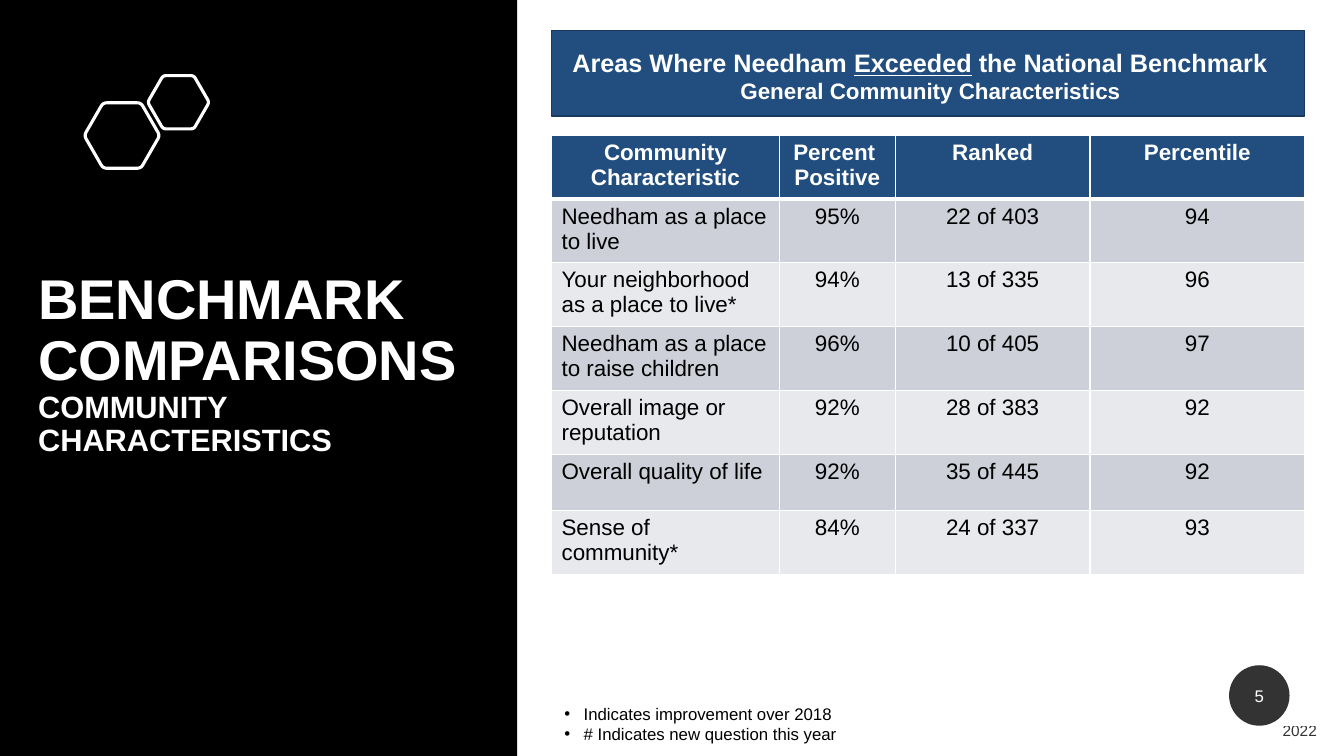
import math
from dataclasses import dataclass

from lxml import etree
from pptx import Presentation
from pptx.dml.color import RGBColor
from pptx.enum.shapes import MSO_SHAPE
from pptx.enum.text import MSO_ANCHOR, PP_ALIGN
from pptx.oxml.ns import qn
from pptx.util import Inches, Pt

LEFT, CENTER, RIGHT = PP_ALIGN.LEFT, PP_ALIGN.CENTER, PP_ALIGN.RIGHT
TOP, MIDDLE = MSO_ANCHOR.TOP, MSO_ANCHOR.MIDDLE
RECTANGLE, OVAL = MSO_SHAPE.RECTANGLE, MSO_SHAPE.OVAL


@dataclass(frozen=True)
class Theme:
    font: str = "Arial"
    black: str = "000000"
    white: str = "FFFFFF"
    navy: str = "224E7F"
    navy_edge: str = "193A5E"
    band_dark: str = "CDD0D8"
    band_light: str = "E8E9EC"
    title: int = 40
    subtitle: int = 22
    heading: int = 18
    body: int = 16
    note: int = 12
    year: int = 11


@dataclass(frozen=True)
class Box:
    left: float
    top: float
    width: float
    height: float

    def emu(self) -> tuple:
        return tuple(Inches(v) for v in (self.left, self.top, self.width, self.height))


@dataclass(frozen=True)
class Run:
    text: str
    size: int
    color: str
    bold: bool = False
    underline: bool = False


@dataclass(frozen=True)
class Line:
    runs: tuple
    align: PP_ALIGN = LEFT
    space_after: int = 0
    bullet: bool = False


@dataclass(frozen=True)
class Hexagon:
    center_x: float
    center_y: float
    radius: float


THEME = Theme()
HEXAGONS = (Hexagon(1.21, 1.345, 0.375), Hexagon(1.77, 1.015, 0.305))
COLUMN_WIDTHS = (2.26, 1.15, 1.93, 2.13)
ROW_HEIGHTS = (0.63, 0.63, 0.63, 0.63, 0.63, 0.56, 0.63)
ROWS = (
    ("Community Characteristic", "Percent \nPositive", "Ranked", "Percentile"),
    ("Needham as a place to live", "95%", "22 of 403", "94"),
    ("Your neighborhood as a place to live*", "94%", "13 of 335", "96"),
    ("Needham as a place to raise children", "96%", "10 of 405", "97"),
    ("Overall image or reputation", "92%", "28 of 383", "92"),
    ("Overall quality of life", "92%", "35 of 445", "92"),
    ("Sense of community*", "84%", "24 of 337", "93"),
)


def rgb(color: str) -> RGBColor:
    return RGBColor.from_string(color)


def format_font(font, size: int, color: str, bold: bool = False) -> None:
    font.name, font.size, font.bold = THEME.font, Pt(size), bold
    font.color.rgb = rgb(color)


def set_opacity(element, percent: int) -> None:
    color = next(element.iter(qn("a:srgbClr")))
    etree.SubElement(color, qn("a:alpha"), val=str(percent * 1000))


def write_lines(shape, lines: tuple, anchor: MSO_ANCHOR = TOP) -> None:
    frame = shape.text_frame
    frame.word_wrap, frame.vertical_anchor = True, anchor
    for index, line in enumerate(lines):
        paragraph = frame.add_paragraph() if index else frame.paragraphs[0]
        paragraph.alignment = line.align
        paragraph.space_after = Pt(line.space_after)
        if line.bullet:
            properties = paragraph._p.get_or_add_pPr()
            properties.set("marL", str(Inches(0.19)))
            properties.set("indent", str(Inches(-0.19)))
            etree.SubElement(properties, qn("a:buFont"), typeface=THEME.font)
            etree.SubElement(properties, qn("a:buChar"), char="•")
        for item in line.runs:
            run = paragraph.add_run()
            run.text = item.text
            format_font(run.font, item.size, item.color, item.bold)
            run.font.underline = item.underline


def add_text(slide, box: Box, lines: tuple, anchor: MSO_ANCHOR = TOP):
    shape = slide.shapes.add_textbox(*box.emu())
    write_lines(shape, lines, anchor)
    return shape


def add_block(slide, kind: MSO_SHAPE, box: Box, fill: str, edge: str = ""):
    shape = slide.shapes.add_shape(kind, *box.emu())
    shape.shadow.inherit = False
    shape.fill.solid()
    shape.fill.fore_color.rgb = rgb(fill)
    if edge:
        shape.line.color.rgb = rgb(edge)
        shape.line.width = Pt(1)
    else:
        shape.line.fill.background()
    return shape


def add_hexagon(slide, hexagon: Hexagon) -> None:
    """Draw a hexagon whose corners are rounded by short quadratic curves."""
    corners = [(hexagon.center_x + hexagon.radius * math.cos(math.radians(60 * i)),
                hexagon.center_y + hexagon.radius * math.sin(math.radians(60 * i)))
               for i in range(6)]
    cut = 0.1  # share of each side taken by a rounded corner
    points = []
    for i, corner in enumerate(corners):
        before, after = corners[i - 1], corners[(i + 1) % 6]
        for t in (0, 0.25, 0.5, 0.75, 1):
            points.append(tuple(
                Inches(c + cut * ((1 - t) ** 2 * (b - c) + t ** 2 * (a - c)))
                for b, c, a in zip(before, corner, after)))
    builder = slide.shapes.build_freeform(*points[0])
    builder.add_line_segments(points[1:], close=True)
    shape = builder.convert_to_shape()
    shape.shadow.inherit = False
    shape.fill.background()
    shape.line.color.rgb = rgb(THEME.white)
    shape.line.width = Pt(2.25)


def set_borders(cell, top: int, bottom: int) -> None:
    properties = cell._tc.get_or_add_tcPr()
    for index, (side, width) in enumerate(
            (("lnL", 1), ("lnR", 1), ("lnT", top), ("lnB", bottom))):
        border = etree.Element(qn(f"a:{side}"), w=str(Pt(width)))
        fill = etree.SubElement(border, qn("a:solidFill"))
        etree.SubElement(fill, qn("a:srgbClr"), val=THEME.white)
        properties.insert(index, border)


def add_benchmark_table(slide, box: Box) -> None:
    table = slide.shapes.add_table(len(ROWS), len(COLUMN_WIDTHS), *box.emu()).table
    for column, width in zip(table.columns, COLUMN_WIDTHS):
        column.width = Inches(width)
    for r, (values, height) in enumerate(zip(ROWS, ROW_HEIGHTS)):
        table.rows[r].height = Inches(height)
        header = r == 0
        band = THEME.band_dark if r % 2 else THEME.band_light
        for c, value in enumerate(values):
            cell = table.cell(r, c)
            cell.text_frame.text = value
            cell.fill.solid()
            cell.fill.fore_color.rgb = rgb(THEME.navy if header else band)
            set_borders(cell, top=3 if r == 1 else 1, bottom=3 if header else 1)
            for paragraph in cell.text_frame.paragraphs:
                paragraph.alignment = CENTER if header or c else LEFT
                for run in paragraph.runs:
                    format_font(run.font, THEME.body,
                                THEME.white if header else THEME.black, header)


def main() -> None:
    presentation = Presentation()
    presentation.slide_width, presentation.slide_height = Inches(13.33), Inches(7.5)
    slide = presentation.slides.add_slide(presentation.slide_layouts[6])

    # Left panel with hexagons
    add_block(slide, RECTANGLE, Box(0, 0, 5.13, 7.5), THEME.black)
    for hexagon in HEXAGONS:
        add_hexagon(slide, hexagon)

    # Year and slide number
    year = Line((Run("2022", THEME.year, THEME.black),), RIGHT, 6)
    year_box = add_text(slide, Box(11.81, 7.05, 1.35, 0.4), (year,), MIDDLE)
    set_opacity(year_box.text_frame.paragraphs[0].runs[0]._r, 80)
    badge = add_block(slide, OVAL, Box(12.19, 6.6, 0.6, 0.6), THEME.black)
    set_opacity(badge._element.spPr, 80)
    write_lines(badge, (Line((Run("5", THEME.note, THEME.white),), CENTER, 6),), MIDDLE)

    # Heading banner
    add_block(slide, RECTANGLE, Box(5.47, 0.3, 7.47, 0.85), THEME.navy, THEME.navy_edge)
    add_text(slide, Box(5.58, 0.42, 7.36, 0.67), (
        Line((Run("Areas Where Needham ", THEME.heading, THEME.white, True),
              Run("Exceeded", THEME.heading, THEME.white, True, True),
              Run(" the National Benchmark", THEME.heading, THEME.white, True))),
        Line((Run("General Community Characteristics ", THEME.body, THEME.white, True),),
             CENTER)))

    # Table and footnotes
    add_benchmark_table(slide, Box(5.47, 1.34, 7.47, sum(ROW_HEIGHTS)))
    add_text(slide, Box(5.5, 6.93, 7.29, 0.5), tuple(
        Line((Run(note, THEME.note, THEME.black),), bullet=True)
        for note in ("Indicates improvement over 2018", "# Indicates new question this year")))

    # Panel title
    title_box = slide.shapes.add_textbox(*Box(0.28, 1.28, 4.48, 4.68).emu())
    frame = title_box.text_frame
    frame.word_wrap, frame.vertical_anchor = True, MIDDLE
    paragraph = frame.paragraphs[0]
    paragraph.text = "BENCHMARK COMPARISONS\vCOMMUNITY CHARACTERISTICS"
    paragraph.line_spacing = 0.9
    for run, size in zip(paragraph.runs, (THEME.title, THEME.subtitle)):
        format_font(run.font, size, THEME.white, True)

    presentation.save("out.pptx")


if __name__ == "__main__":
    main()
